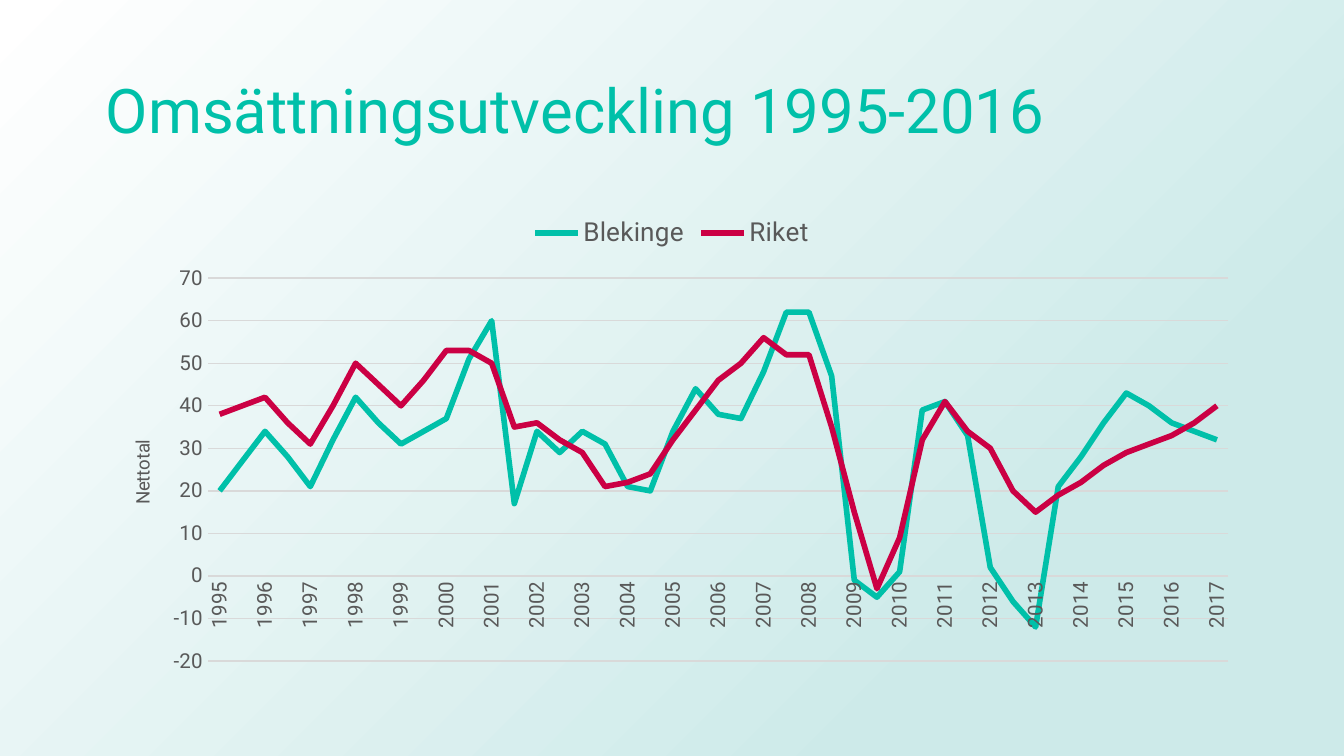
"""Build a slide with a line chart of turnover development in Blekinge and Sweden."""
import pptx
import pptx.chart.data
import pptx.dml.color
import pptx.enum.chart
import pptx.enum.text
import pptx.oxml
import pptx.oxml.ns
import pptx.util

Pt = pptx.util.Pt
RGBColor = pptx.dml.color.RGBColor

TEAL = RGBColor(0x00, 0xC0, 0xA9)
CRIMSON = RGBColor(0xCB, 0x00, 0x44)
GRAY = RGBColor(0x59, 0x59, 0x59)
GRID = RGBColor(0xD9, 0xD9, 0xD9)
WHITE = RGBColor(0xFF, 0xFF, 0xFF)
MIST = RGBColor(0xCD, 0xEA, 0xE9)

YEARS = [str(1995 + i // 2) for i in range(45)]
SERIES = [
    ("Blekinge", TEAL, [
        20, 27, 34, 28, 21, 32, 42, 36, 31, 34, 37, 51, 60, 17, 34,
        29, 34, 31, 21, 20, 34, 44, 38, 37, 48, 62, 62, 47, -1, -5,
        1, 39, 41, 33, 2, -6, -12, 21, 28, 36, 43, 40, 36, 34, 32]),
    ("Riket", CRIMSON, [
        38, 40, 42, 36, 31, 40, 50, 45, 40, 46, 53, 53, 50, 35, 36,
        32, 29, 21, 22, 24, 32, 39, 46, 50, 56, 52, 52, 35, 15, -3,
        9, 32, 41, 34, 30, 20, 15, 19, 22, 26, 29, 31, 33, 36, 40]),
]


class Deck:
    """Hold the style and the current slide."""

    font = "Roboto"

    def __init__(self, width, height):
        """Start a presentation with one title-only slide."""
        self.prs = pptx.Presentation()
        self.prs.slide_width, self.prs.slide_height = Pt(width), Pt(height)
        self.s = self.prs.slides.add_slide(self.prs.slide_layouts[5])

    def style(self, font, size, color):
        """Apply the deck typeface with a size and colour."""
        font.name, font.size, font.bold = self.font, Pt(size), False
        font.color.rgb = color

    def background(self, start, end):
        """Fill the background with a diagonal gradient."""
        fill = self.s.background.fill
        fill.gradient()
        fill.gradient_angle = 315
        for stop, color, position in zip(fill.gradient_stops, (start, end), (0, 0.77)):
            stop.color.rgb, stop.position = color, position

    def title(self, text, x, y, w, h):
        """Place and format the slide title."""
        sp = self.s.shapes.title
        sp.left, sp.top, sp.width, sp.height = Pt(x), Pt(y), Pt(w), Pt(h)
        tf = sp.text_frame
        tf.text = text
        tf.vertical_anchor = pptx.enum.text.MSO_ANCHOR.MIDDLE
        p = tf.paragraphs[0]
        p.alignment = pptx.enum.text.PP_ALIGN.LEFT
        p.line_spacing = 0.9
        self.style(p.font, 33, TEAL)

    def layout(self, parent, index, **parts):
        """Give a chart part a manual layout in fractions of the chart."""
        for old in parent.findall(pptx.oxml.ns.qn("c:layout")):
            parent.remove(old)
        target = '<c:layoutTarget val="inner"/>' if "w" in parts else ""
        modes = "".join(f'<c:{k}Mode val="edge"/>' for k in "xy")
        values = "".join(f'<c:{k} val="{v}"/>' for k, v in parts.items())
        parent.insert(index, pptx.oxml.parse_xml(
            f'<c:layout {pptx.oxml.ns.nsdecls("c")}><c:manualLayout>'
            f'{target}{modes}{values}</c:manualLayout></c:layout>'))

    def line_chart(self, categories, series, axis_title, x, y, w, h):
        """Add a line chart with a top legend and upright year labels."""
        data = pptx.chart.data.CategoryChartData(number_format="0")
        data.categories = categories
        for name, _, values in series:
            data.add_series(name, values)
        chart = self.s.shapes.add_chart(
            pptx.enum.chart.XL_CHART_TYPE.LINE, Pt(x), Pt(y), Pt(w), Pt(h), data).chart
        chart.has_title = False
        self.style(chart.font, 10, GRAY)
        for ser, (_, color, _) in zip(chart.plots[0].series, series):
            ser.smooth = False
            ser.format.line.color.rgb = color
            ser.format.line.width = Pt(3)
            ser.marker.style = pptx.enum.chart.XL_MARKER_STYLE.NONE

        chart.has_legend = True
        chart.legend.position = pptx.enum.chart.XL_LEGEND_POSITION.TOP
        chart.legend.include_in_layout = False
        self.style(chart.legend.font, 14, GRAY)

        cat, val = chart.category_axis, chart.value_axis
        for axis in (cat, val):
            axis.major_tick_mark = pptx.enum.chart.XL_TICK_MARK.NONE
            axis.minor_tick_mark = pptx.enum.chart.XL_TICK_MARK.NONE
            self.style(axis.tick_labels.font, 11, GRAY)
        val.minimum_scale, val.maximum_scale, val.major_unit = -20, 70, 10
        val.tick_labels.number_format = "0"
        val.tick_labels.number_format_is_linked = False
        val.format.line.fill.background()
        for line in (cat.format.line, val.major_gridlines.format.line):
            line.color.rgb, line.width = GRID, Pt(0.75)

        tf = val.axis_title.text_frame
        tf.text = axis_title
        self.style(tf.paragraphs[0].font, 10, GRAY)

        root = chart.element
        root.xpath(".//c:catAx/c:txPr/a:bodyPr")[0].set("rot", "-5400000")
        root.xpath(".//c:valAx/c:title//a:bodyPr")[0].set("rot", "-5400000")
        root.xpath(".//c:catAx/c:noMultiLvlLbl")[0].addprevious(pptx.oxml.parse_xml(
            f'<c:tickLblSkip {pptx.oxml.ns.nsdecls("c")} val="2"/>'))
        self.layout(root.xpath(".//c:plotArea")[0], 0, x=0.1, y=0.16, w=0.88, h=0.8)
        self.layout(root.xpath(".//c:valAx/c:title")[0], 1, x=0.03, y=0.49)


def main():
    """Build and save the slide."""
    deck = Deck(720, 405)
    deck.background(WHITE, MIST)
    deck.title("Omsättningsutveckling 1995-2016", 49.5, 21.5, 621, 78.5)
    deck.line_chart(YEARS, SERIES, "Nettotal", 49.5, 108, 621, 256.5)
    deck.prs.save("out.pptx")


if __name__ == "__main__":
    main()
